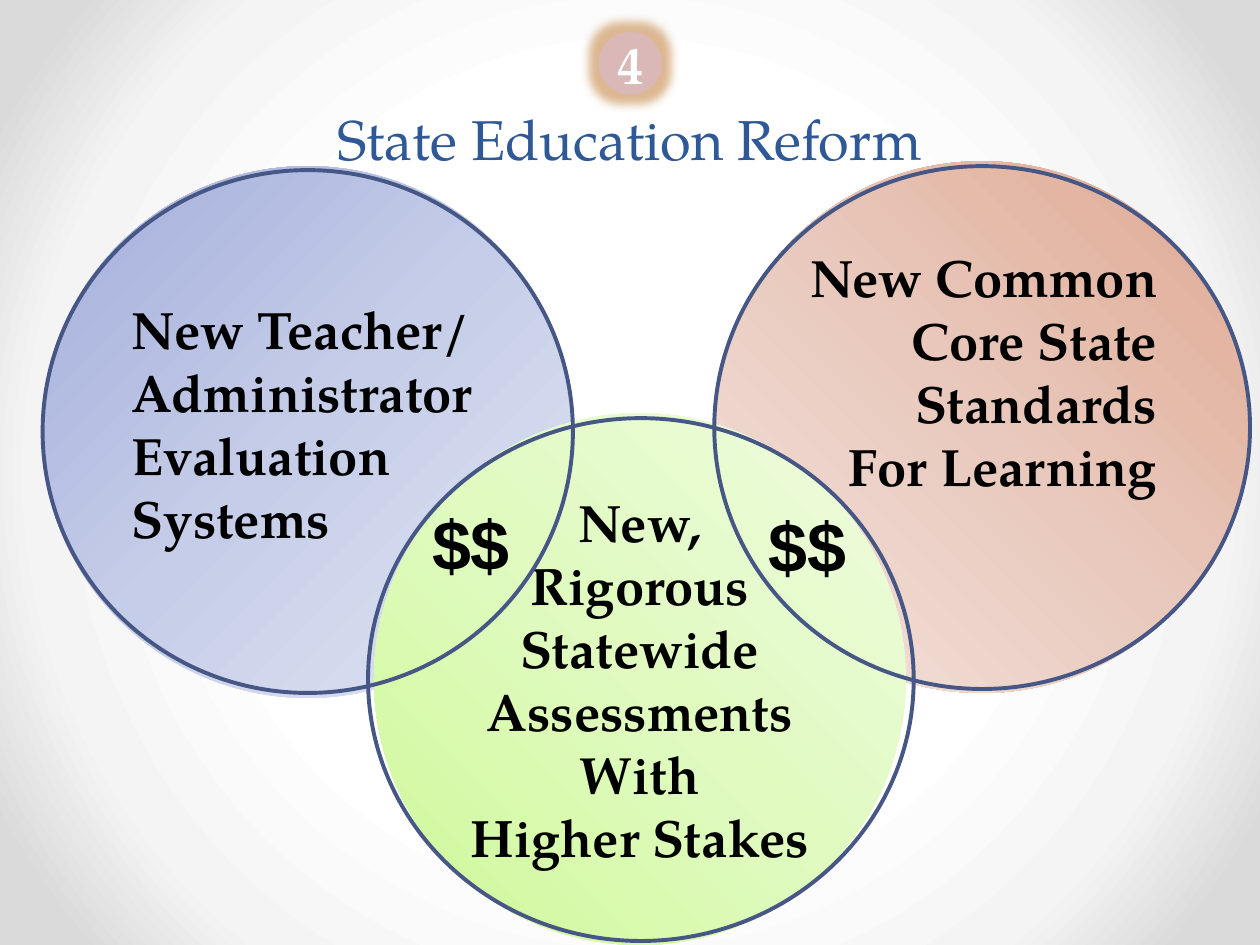
from lxml import etree
from pptx import Presentation
from pptx.dml import color
from pptx.enum import shapes, text
from pptx.util import Cm, Pt

SERIF, SANS = "TeX Gyre Pagella", "Arial"
COLORS = {"title": "2F5897", "ink": "000000", "white": "FFFFFF",
          "ring": "475785", "badge": "DAB8B8", "glow": "DDB892"}
LEFT, CENTER, RIGHT = text.PP_ALIGN.LEFT, text.PP_ALIGN.CENTER, text.PP_ALIGN.RIGHT
TOP, MIDDLE = text.MSO_ANCHOR.TOP, text.MSO_ANCHOR.MIDDLE
A = "http://schemas.openxmlformats.org/drawingml/2006/main"

# Content: positions and sizes in centimetres
TITLE = "State Education Reform"
BACKDROP = [(50, "FFFFFF"), (76, "F4F4F4"), (92, "DADADA")]
DISC_SIZE = 10.72
# left, top, paragraphs, alignment, anchor, bottom inset, stops, focus (l, t, r, b) or angle
DISCS = [
    (0.84, 3.35, ["New Teacher/", "Administrator", "Evaluation Systems"],
     LEFT, MIDDLE, 0.5, [(0, "A2AEDC"), (50, "C6CDE8"), (100, "E3E6F3")], (0, 0, 100, 100)),
    (14.43, 3.25, ["New Common Core State Standards", "For Learning"],
     RIGHT, TOP, 0.13, [(0, "DFA891"), (50, "E9C9BD"), (100, "F4E5DF")], 135),
    (7.54, 8.33, ["New,\vRigorous Statewide", "Assessments With", "Higher Stakes"],
     CENTER, MIDDLE, 0.13, [(0, "CFF998"), (50, "E0FAC0"), (100, "EFFCE0")], (0, 100, 100, 0)),
]
RING_HEIGHT = 10.54
RINGS = [(7.42, 8.43, 11), (14.4, 3.35, 10.8), (0.86, 3.43, 10.69)]  # left, top, width
MONEY = [(8.46, 9.96), (15.24, 10.01)]
BADGE = (12.07, 0.64, 1.27)  # left, top, size


def rgb(name):
    return color.RGBColor.from_string(COLORS[name])


def add(parent, tag, **attributes):
    return etree.SubElement(parent, f"{{{A}}}{tag}", {k: str(v) for k, v in attributes.items()})


def set_gradient(owner, fill, stops, direction):
    """Fill with several stops, along an angle or out from a focus rectangle."""
    fill.gradient()
    gradient = owner.xpath(".//a:gradFill")[0]
    for child in list(gradient):
        gradient.remove(child)
    stop_list = add(gradient, "gsLst")
    for position, value in stops:
        add(add(stop_list, "gs", pos=position * 1000), "srgbClr", val=value)
    if isinstance(direction, tuple):
        focus = {side: share * 1000 for side, share in zip("ltrb", direction)}
        add(add(gradient, "path", path="circle"), "fillToRect", **focus)
    else:
        add(gradient, "lin", ang=direction * 60000, scaled=0)


def add_circle(left, top, width, height):
    circle = slide.shapes.add_shape(shapes.MSO_SHAPE.OVAL, Cm(left), Cm(top), Cm(width), Cm(height))
    circle.shadow.inherit = False
    circle.line.fill.background()
    return circle


def write(frame, paragraphs, size, font=SERIF, ink="ink", align=LEFT, bold=True):
    frame.text = "\n".join(paragraphs)
    for paragraph in frame.paragraphs:
        paragraph.alignment = align
        for run in paragraph.runs:
            run.font.name, run.font.size, run.font.bold = font, Pt(size), bold
            run.font.color.rgb = rgb(ink)


prs = Presentation()
prs.slide_width, prs.slide_height = Cm(25.4), Cm(19.05)
slide = prs.slides.add_slide(prs.slide_layouts[5])
set_gradient(slide.element, slide.background.fill, BACKDROP, (50, 50, 50, 50))

# Title
title = slide.shapes.title
title.left, title.top, title.width, title.height = Cm(6.3), Cm(2.01), Cm(12.8), Cm(1.57)
write(title.text_frame, [TITLE], 32, ink="title", align=CENTER, bold=False)
title.text_frame.vertical_anchor = text.MSO_ANCHOR.BOTTOM
title.text_frame.paragraphs[0].line_spacing = Pt(58)

# Overlapping reform discs
for left, top, paragraphs, align, anchor, inset, stops, direction in DISCS:
    disc = add_circle(left, top, DISC_SIZE, DISC_SIZE)
    set_gradient(disc.element, disc.fill, stops, direction)
    write(disc.text_frame, paragraphs, 30, align=align)
    disc.text_frame.vertical_anchor = anchor
    disc.text_frame.margin_bottom = Cm(inset)

# Outlines on top of the discs
for left, top, width in RINGS:
    ring = add_circle(left, top, width, RING_HEIGHT)
    ring.fill.background()
    ring.line.color.rgb = rgb("ring")
    ring.line.width = Pt(2.25)

# Money signs in the overlaps
for left, top in MONEY:
    money = slide.shapes.add_textbox(Cm(left), Cm(top), Cm(2.74), Cm(3.68))
    money.text_frame.word_wrap = True
    write(money.text_frame, ["$$"], 40, font=SANS)

# Slide number badge with a glow
left, top, size = BADGE
badge = add_circle(left, top, size, size)
badge.fill.solid()
badge.fill.fore_color.rgb = rgb("badge")
effects = badge.element.xpath(".//a:effectLst")[0]
add(add(effects, "glow", rad=Pt(11)), "srgbClr", val=COLORS["glow"])
number = badge.text_frame
number.margin_left = number.margin_right = number.margin_top = number.margin_bottom = 0
number.word_wrap = False
number.vertical_anchor = MIDDLE
write(number, ["4"], 30, ink="white", align=CENTER)

prs.save("out.pptx")
